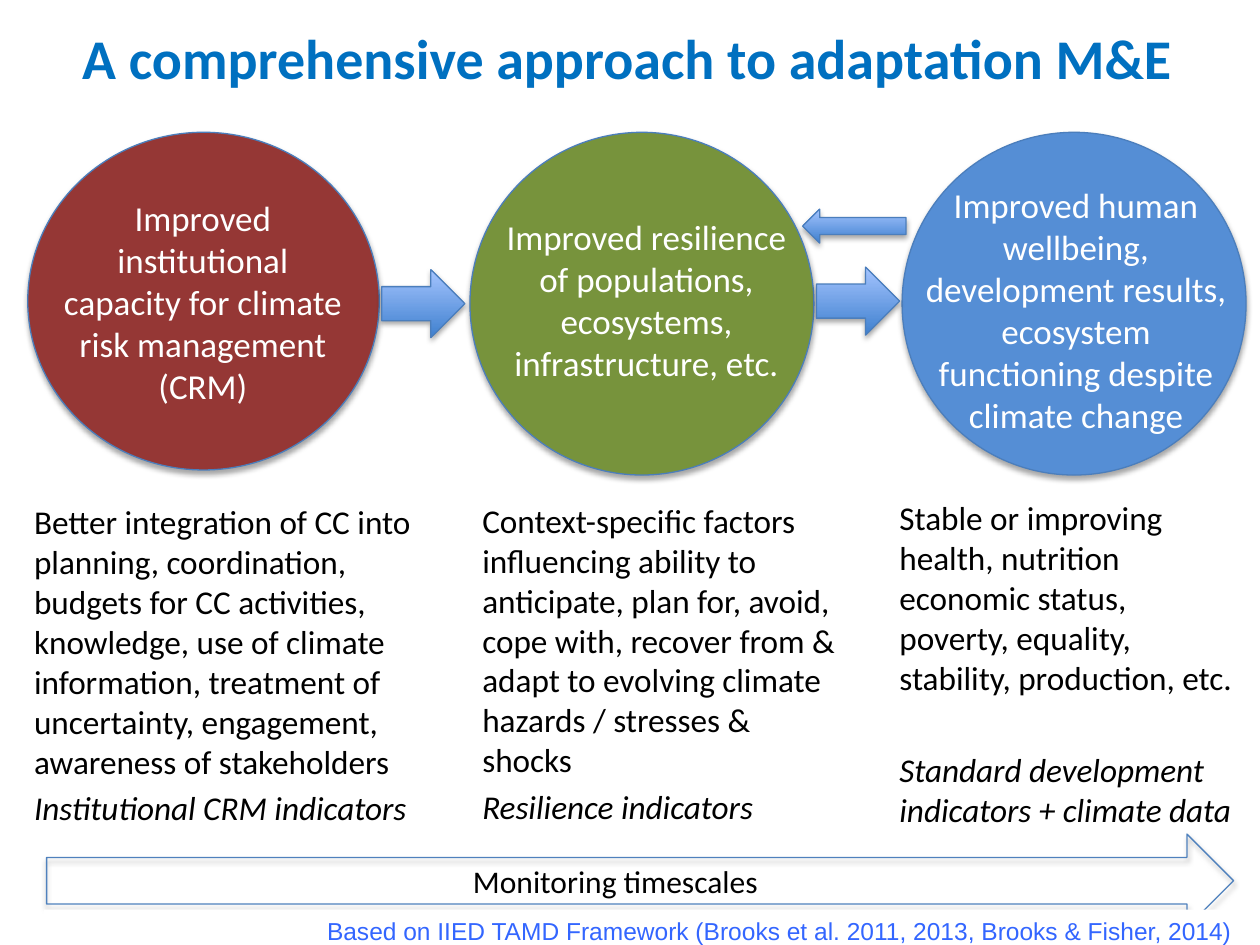
"""Build the slide on a comprehensive approach to adaptation M&E."""
import pptx
import pptx.dml.color
import pptx.enum.shapes
import pptx.enum.text
import pptx.oxml
import pptx.util
from pptx.util import Inches

SHAPE = pptx.enum.shapes.MSO_SHAPE
ALIGN = pptx.enum.text.PP_ALIGN
ANCHOR = pptx.enum.text.MSO_ANCHOR


def color(value):
    """Turn a hex string into a colour."""
    return pptx.dml.color.RGBColor.from_string(value)


def write(box, paragraphs, size, ink, align, anchor=ANCHOR.TOP, name="Calibri"):
    """Fill a box with (text, space before, font format) paragraphs."""
    frame = box.text_frame
    frame.word_wrap = True
    frame.auto_size = pptx.enum.text.MSO_AUTO_SIZE.NONE
    frame.vertical_anchor = anchor
    for index, (text, space, extra) in enumerate(paragraphs):
        para = frame.paragraphs[0] if index == 0 else frame.add_paragraph()
        para.alignment = align
        para.space_before = pptx.util.Pt(space)
        span = para.add_run()
        span.text = text
        span.font.color.rgb = color(ink)
        for key, value in {"name": name, "size": pptx.util.Pt(size), **extra}.items():
            setattr(span.font, key, value)


deck = pptx.Presentation()
deck.slide_width, deck.slide_height = Inches(10), Inches(7.5)
page = deck.slides.add_slide(deck.slide_layouts[1])

title = page.shapes.title
body = page.placeholders[1]
title_place = {"left": 0.17, "top": 0.11, "width": 9.62, "height": 0.69}
body_place = {"left": 0.17, "top": 3.93, "width": 3.21, "height": 2.99}
for holder, place in ((title, title_place), (body, body_place)):
    for key, value in place.items():
        setattr(holder, key, Inches(value))
write(title, [("A comprehensive approach to adaptation M&E", 0, {"bold": True})],
      32, "0070C0", ALIGN.CENTER, ANCHOR.MIDDLE)

circles = [
    (0.22, 2.79, 2.68, "953735", (0.37, 1.51, 2.48, 1.78),
     "Improved institutional capacity for climate risk management (CRM)"),
    (3.73, 2.73, 2.72, "77933C", (3.89, 1.66, 2.48, 1.45),
     "Improved resilience of populations, ecosystems, infrastructure, etc."),
    (7.16, 2.73, 2.72, "558ED5", (7.18, 1.41, 2.72, 2.12),
     "Improved human wellbeing, development results, ecosystem functioning "
     "despite climate change"),
]
for left, width, height, fill, place, text in circles:
    circle = page.shapes.add_shape(
        SHAPE.OVAL, Inches(left), Inches(1.05), Inches(width), Inches(height))
    circle.fill.solid()
    circle.fill.fore_color.rgb = color(fill)
    circle.line.color.rgb = color("4B7EBC")
    circle.line.width = pptx.util.Pt(0.75)
    label = page.shapes.add_textbox(*map(Inches, place))
    write(label, [(text, 0, {})], 20, "FFFFFF", ALIGN.CENTER)

arrows = [
    (SHAPE.RIGHT_ARROW, (3.03, 2.14, 0.66, 0.54)),
    (SHAPE.RIGHT_ARROW, (6.48, 2.12, 0.66, 0.54)),
    (SHAPE.LEFT_ARROW, (6.37, 1.66, 0.82, 0.27)),
]
for kind, place in arrows:
    arrow = page.shapes.add_shape(kind, *map(Inches, place))
    arrow.fill.gradient()
    arrow.fill.gradient_angle = 90
    for stop, position, tone in zip(
            arrow.fill.gradient_stops, (0, 1), ("3F80CE", "A4C4FF")):
        stop.position = position
        stop.color.rgb = color(tone)
    arrow.line.color.rgb = color("4B7EBC")
    arrow.line.width = pptx.util.Pt(0.75)

resilience = page.shapes.add_textbox(
    Inches(3.73), Inches(3.92), Inches(3.06), Inches(2.99))
wellbeing = page.shapes.add_textbox(
    Inches(7.04), Inches(3.9), Inches(2.86), Inches(2.99))
columns = [
    (body, "Better integration of CC into planning, coordination, budgets for CC "
     "activities, knowledge, use of climate information, treatment of uncertainty, "
     "engagement, awareness of stakeholders", 4, "Institutional CRM indicators"),
    (resilience, "Context-specific factors influencing ability to anticipate, plan "
     "for, avoid, cope with, recover from & adapt to evolving climate hazards / "
     "stresses & shocks", 4, "Resilience indicators"),
    (wellbeing, "Stable or improving health, nutrition economic status, poverty, "
     "equality, stability, production, etc.", 30,
     "Standard development indicators + climate data"),
]
for box, text, gap, indicators in columns:
    write(box, [(text, 0, {}), (indicators, gap, {"italic": True})],
          19, "000000", ALIGN.LEFT)
for para in body.text_frame.paragraphs:
    properties = para._p.get_or_add_pPr()
    properties.set("marL", "0")
    properties.set("indent", "0")
    properties.append(pptx.oxml.parse_xml(
        '<a:buNone xmlns:a="http://schemas.openxmlformats.org/drawingml/2006/main"/>'))

timeline = page.shapes.add_shape(
    SHAPE.RIGHT_ARROW, Inches(0.37), Inches(6.62), Inches(9.42), Inches(0.74))
timeline.fill.background()
timeline.line.color.rgb = color("4F81BD")
timeline.line.width = pptx.util.Pt(0.75)
caption = page.shapes.add_textbox(
    Inches(1.4), Inches(6.79), Inches(6.97), Inches(0.4))
write(caption, [("Monitoring timescales", 0, {})], 18, "000000", ALIGN.CENTER)

credit = page.shapes.add_shape(
    SHAPE.RECTANGLE, Inches(0.35), Inches(7.22), Inches(9.53), Inches(0.34))
credit.shadow.inherit = False
credit.fill.solid()
credit.fill.fore_color.rgb = color("FFFFFF")
credit.line.fill.background()
write(credit, [("Based on IIED TAMD Framework (Brooks et al. 2011, 2013, "
                "Brooks & Fisher, 2014)", 0, {})],
      14, "3366FF", ALIGN.RIGHT, name="Arial")

deck.save("out.pptx")
